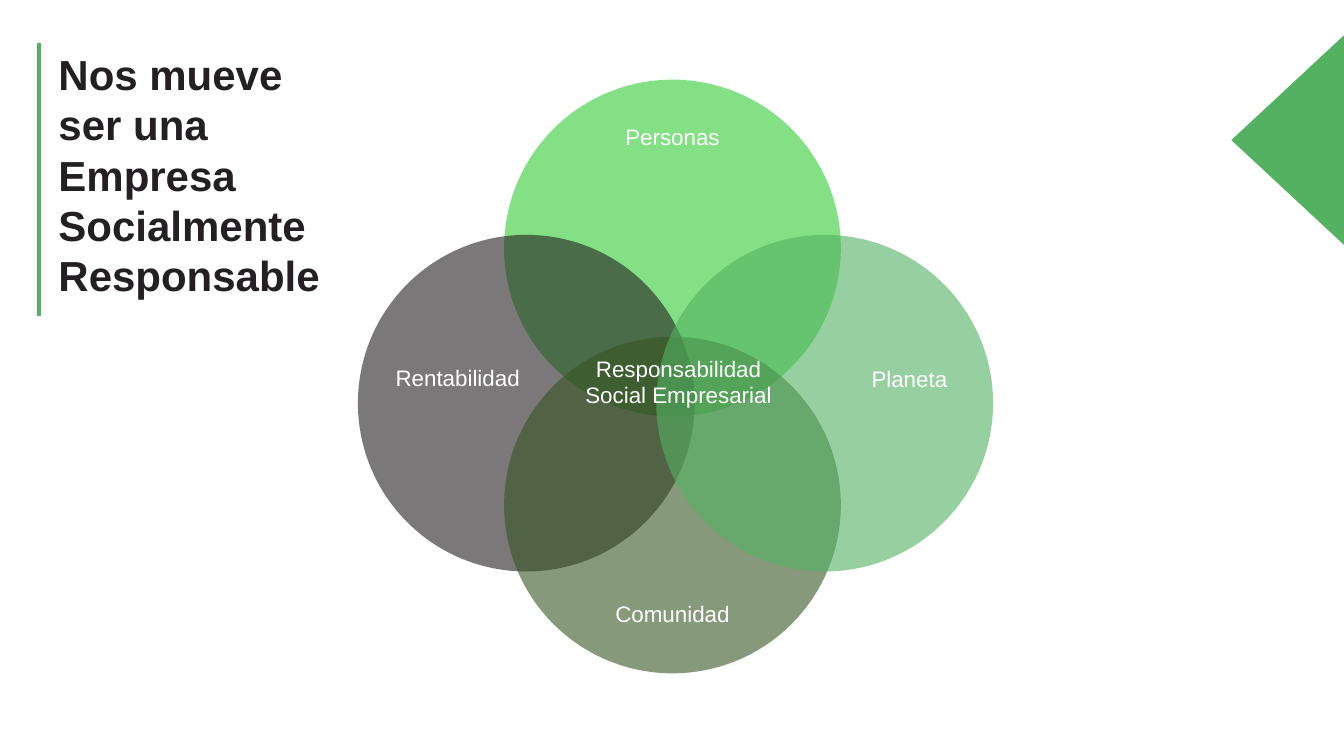
from pptx import Presentation
from pptx.dml.color import RGBColor
from pptx.enum.shapes import MSO_CONNECTOR as Connector, MSO_SHAPE as Shape
from pptx.enum.text import MSO_ANCHOR as Anchor, MSO_AUTO_SIZE as AutoSize, PP_ALIGN as Align
from pptx.oxml.ns import qn
from pptx.util import Inches, Pt
from lxml.etree import SubElement

GREEN, DARK, WHITE = "53B262", "241F22", "FFFFFF"
DIAMETER = 3.34
CIRCLES = [
    (1.45, 0, "33CC33"),
    (0, 1.54, DARK),
    (1.45, 2.55, "375623"),
    (2.96, 1.54, GREEN),
]
LABELS = [
    ("Responsabilidad Social Empresarial", 2, 2.68, 2.36, 0.64),
    ("Personas", 1.94, 0.38, 2.36, 0.37),
    ("Comunidad", 1.94, 5.11, 2.36, 0.37),
    ("Rentabilidad", -0.19, 2.77, 2.36, 0.37),
    ("Planeta", 3.9, 2.78, 3.14, 0.37),
]


def color(value):
    """Turn a hex string into a colour."""
    return RGBColor.from_string(value)


def style_font(paragraph, size, value, bold=False):
    """Set the font of a whole paragraph."""
    font = paragraph.font
    font.name, font.size, font.bold = "Arial", Pt(size), bold
    font.color.rgb = color(value)


def add_filled(slide, kind, left, top, width, height, fill):
    """Add a flat shape without an outline."""
    shape = slide.shapes.add_shape(
        kind, Inches(left), Inches(top), Inches(width), Inches(height))
    shape.shadow.inherit = False
    shape.fill.solid()
    shape.fill.fore_color.rgb = color(fill)
    shape.line.fill.background()
    return shape


def add_heading(slide, left, top, width, height):
    """Place the title with the green rule on its left."""
    title = slide.shapes.title
    title.left, title.top = Inches(left), Inches(top)
    title.width, title.height = Inches(width), Inches(height)
    frame = title.text_frame
    frame.word_wrap, frame.auto_size = True, AutoSize.NONE
    frame.vertical_anchor = Anchor.TOP
    frame.text = "Nos mueve\nser una\nEmpresa Socialmente Responsable"
    for paragraph in frame.paragraphs:
        paragraph.alignment = Align.LEFT
        style_font(paragraph, 30, DARK, bold=True)
    rule_x = Inches(left - 0.09)
    rule = slide.shapes.add_connector(
        Connector.STRAIGHT, rule_x, Inches(top), rule_x, Inches(top + height))
    rule.line.color.rgb = color(GREEN)
    rule.line.width = Pt(3)
    SubElement(rule._element.spPr, qn("a:effectLst"))


def add_corner_diamond(slide, left, top, width, height):
    """Place the diamond that bleeds off the right edge."""
    diamond = add_filled(slide, Shape.DIAMOND, left, top, width, height, GREEN)
    diamond.line.color.rgb = color(WHITE)
    diamond.line.width = Pt(3)


def add_venn(slide, left, top):
    """Place the translucent circles and their labels."""
    for x, y, fill in CIRCLES:
        circle = add_filled(
            slide, Shape.OVAL, left + x, top + y, DIAMETER, DIAMETER, fill)
        fill_color = circle._element.spPr.find(qn("a:solidFill"))[0]
        SubElement(fill_color, qn("a:alpha"), val="60000")
    for text, x, y, width, height in LABELS:
        label = slide.shapes.add_textbox(
            Inches(left + x), Inches(top + y), Inches(width), Inches(height))
        label.text_frame.word_wrap = True
        paragraph = label.text_frame.paragraphs[0]
        paragraph.text = text
        paragraph.alignment = Align.CENTER
        style_font(paragraph, 16, WHITE)


def main():
    """Build and save the slide."""
    presentation = Presentation()
    presentation.slide_width = Inches(13.33)
    presentation.slide_height = Inches(7.5)
    slide = presentation.slides.add_slide(presentation.slide_layouts[5])
    add_heading(slide, 0.48, 0.43, 4.06, 2.71)
    add_corner_diamond(slide, 12.18, 0.32, 2.3, 2.14)
    add_venn(slide, 3.55, 0.79)
    presentation.save("out.pptx")


if __name__ == "__main__":
    main()
